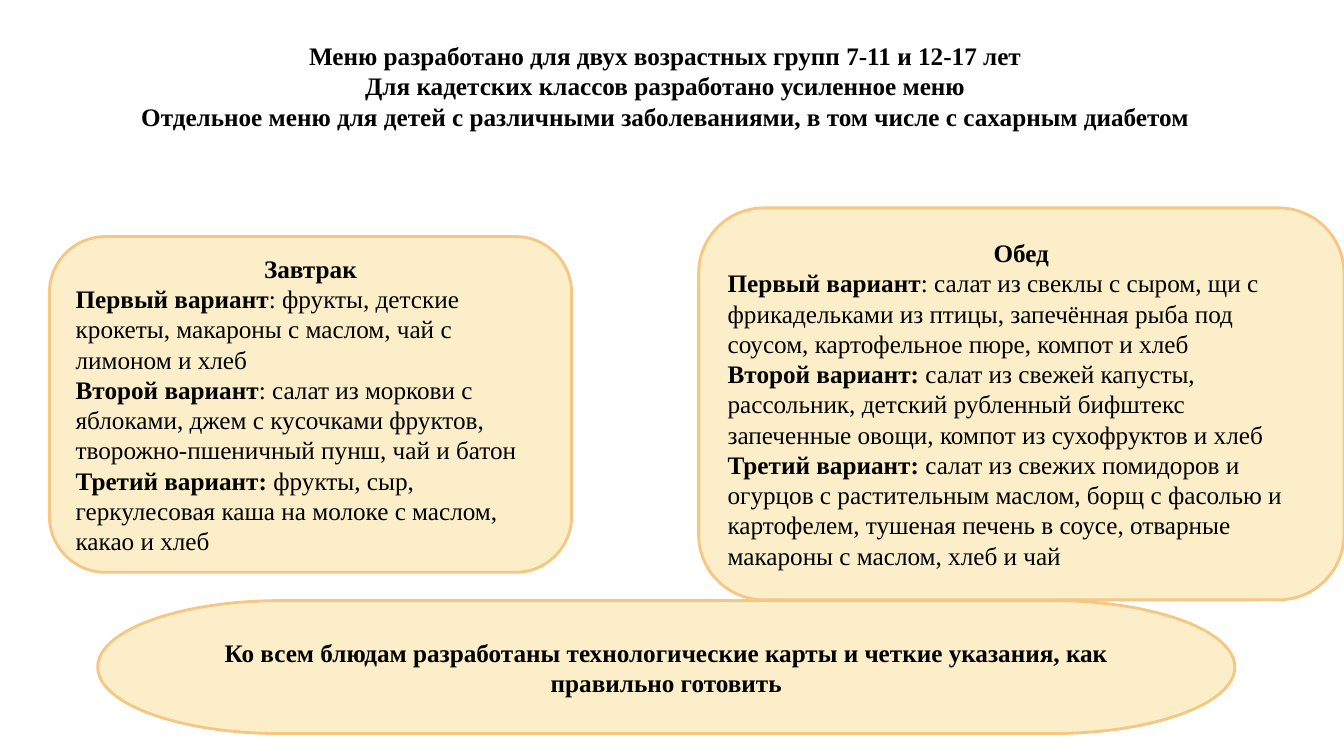
from dataclasses import dataclass

from pptx import Presentation
from pptx.dml.color import RGBColor
from pptx.enum.shapes import MSO_SHAPE
from pptx.enum.text import MSO_ANCHOR, MSO_AUTO_SIZE, PP_ALIGN
from pptx.util import Pt


@dataclass(frozen=True)
class Theme:
    font: str = "Times New Roman"
    size: int = 18
    text: RGBColor = RGBColor(0x00, 0x00, 0x00)
    fill: RGBColor = RGBColor(0xFB, 0xEE, 0xC9)
    outline: RGBColor = RGBColor(0xF6, 0xC7, 0x82)
    outline_width: int = 2


class MenuSlide:
    def __init__(self, slide, theme):
        self.slide = slide
        self.theme = theme

    def style_paragraph(self, paragraph, alignment, bold=None):
        paragraph.alignment = alignment
        font = paragraph.font
        font.name = self.theme.font
        font.size = Pt(self.theme.size)
        font.color.rgb = self.theme.text
        font.bold = bold

    def heading(self, box, lines):
        title = self.slide.shapes.title
        title.left, title.top, title.width, title.height = map(Pt, box)
        frame = title.text_frame
        frame.word_wrap = True
        frame.auto_size = MSO_AUTO_SIZE.NONE
        frame.vertical_anchor = MSO_ANCHOR.TOP
        frame.text = "\n".join(lines)
        for paragraph in frame.paragraphs:
            self.style_paragraph(paragraph, PP_ALIGN.CENTER, bold=True)

    def panel(self, preset, box, caption):
        """Draw a filled panel with a bold centred caption; return its text frame."""
        shape = self.slide.shapes.add_shape(preset, *map(Pt, box))
        shape.shadow.inherit = False
        shape.fill.solid()
        shape.fill.fore_color.rgb = self.theme.fill
        shape.line.color.rgb = self.theme.outline
        shape.line.width = Pt(self.theme.outline_width)
        frame = shape.text_frame
        frame.word_wrap = True
        frame.vertical_anchor = MSO_ANCHOR.MIDDLE
        frame.text = caption
        self.style_paragraph(frame.paragraphs[0], PP_ALIGN.CENTER, bold=True)
        return frame

    def meal(self, box, name, variants):
        frame = self.panel(MSO_SHAPE.FLOWCHART_ALTERNATE_PROCESS, box, name)
        for label, dishes in variants:
            paragraph = frame.add_paragraph()
            self.style_paragraph(paragraph, PP_ALIGN.LEFT)
            for text, bold in ((label, True), (dishes, False)):
                run = paragraph.add_run()
                run.text = text
                run.font.bold = bold


def main():
    presentation = Presentation()
    presentation.slide_width = Pt(960)
    presentation.slide_height = Pt(540)
    title_only = presentation.slide_layouts[5]
    menu = MenuSlide(presentation.slides.add_slide(title_only), Theme())

    menu.heading((89.3, 25.2, 771.8, 72.7), [
        "Меню разработано для двух возрастных групп 7-11 и 12-17 лет",
        "Для кадетских классов разработано усиленное меню",
        "Отдельное меню для детей с различными заболеваниями, в том числе с сахарным диабетом",
    ])
    menu.meal((35.3, 169, 373, 239.8), "Завтрак", [
        ("Первый вариант", ": фрукты, детские крокеты, макароны с маслом, чай с лимоном и хлеб"),
        ("Второй вариант", ": салат из моркови с яблоками, джем с кусочками фруктов, "
                           "творожно-пшеничный пунш, чай и батон"),
        ("Третий вариант: ", "фрукты, сыр, геркулесовая каша на молоке с маслом, какао и хлеб"),
    ])
    menu.meal((499, 148.5, 461, 280), "Обед", [
        ("Первый вариант", ": салат из свеклы с сыром, щи с фрикадельками из птицы, "
                           "запечённая рыба под соусом, картофельное пюре, компот и хлеб"),
        ("Второй вариант: ", "салат из свежей капусты, рассольник, детский рубленный бифштекс "
                             "запеченные овощи, компот из сухофруктов и хлеб"),
        ("Третий вариант: ", "салат из свежих помидоров и огурцов с растительным маслом, "
                             "борщ с фасолью и картофелем, тушеная печень в соусе, "
                             "отварные макароны с маслом, хлеб и чай"),
    ])
    menu.panel(
        MSO_SHAPE.FLOWCHART_TERMINATOR, (69.8, 429, 812.3, 95),
        "Ко всем блюдам разработаны технологические карты и четкие указания, "
        "как правильно готовить",
    )
    presentation.save("out.pptx")


if __name__ == "__main__":
    main()
